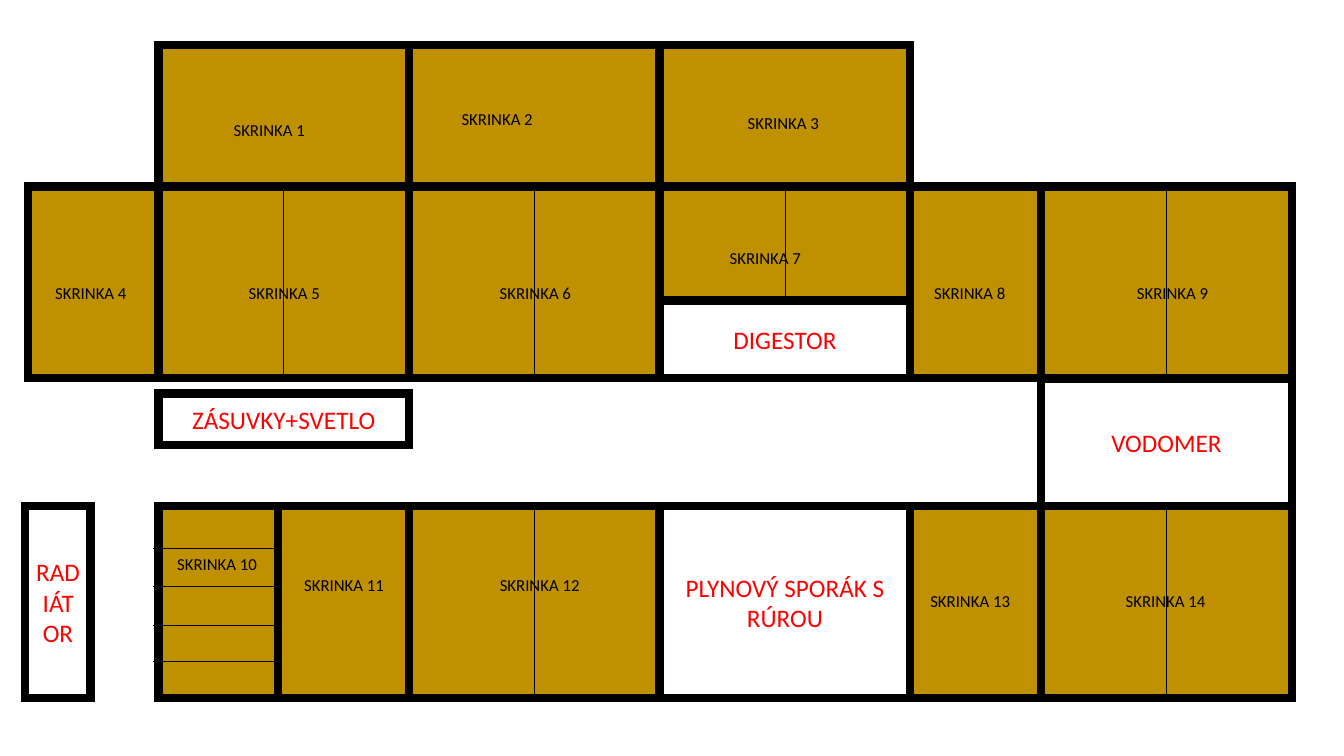
"""Builds the kitchen cabinet layout slide."""
from typing import NamedTuple

from lxml import etree
from pptx import Presentation
from pptx.dml.color import RGBColor
from pptx.enum import shapes, text
from pptx.oxml import ns
from pptx.util import Pt

OAK = RGBColor(0xBF, 0x90, 0x00)
WHITE = RGBColor(0xFF, 0xFF, 0xFF)
BLACK = RGBColor(0x00, 0x00, 0x00)
RED = RGBColor(0xFF, 0x00, 0x00)

FONT = "Calibri"
WIDE, NARROW = 179, 93.5
COL_B = 113.2
COL_A = COL_B - NARROW + 0.5
COL_C = COL_B + WIDE
COL_D = COL_C + WIDE
COL_E = COL_D + WIDE
COL_F = COL_E + NARROW
COL_B2 = 198.8
TOP_ROW, MID_ROW, BASE_ROW = 32, 133.2, 361.6
TOP_HEIGHT, HEIGHT, HOOD_HEIGHT = 101, 137, 55.4
HOOD_TOP = MID_ROW + HEIGHT - HOOD_HEIGHT
LABEL_HEIGHT = 21.8
DRAWER_TOPS = (391.6, 418.6, 446.4, 472.2)


class Cabinet(NamedTuple):
    left: float
    top: float
    width: float
    height: float
    label_left: float
    label_top: float
    label_width: float
    double_door: bool = False


class Fixture(NamedTuple):
    name: str
    left: float
    top: float
    width: float
    height: float


CABINETS = (
    Cabinet(COL_B, TOP_ROW, WIDE, TOP_HEIGHT, 159.8, 82.2, 92),
    Cabinet(COL_C, TOP_ROW, WIDE, TOP_HEIGHT, 322.6, 74.2, 116),
    Cabinet(COL_D, TOP_ROW, WIDE, TOP_HEIGHT, 527, 77, 89),
    Cabinet(COL_A, MID_ROW, NARROW, HEIGHT, 32.4, 198.7, 69),
    Cabinet(COL_B, MID_ROW, WIDE, HEIGHT, 170.6, 198.7, 81, True),
    Cabinet(COL_C, MID_ROW, WIDE, HEIGHT, 349.9, 198.7, 100, True),
    Cabinet(COL_D, MID_ROW, WIDE, HOOD_TOP - MID_ROW, 514.1, 173.5, 94, True),
    Cabinet(COL_E, MID_ROW, NARROW, HEIGHT, 660.2, 198.7, 71),
    Cabinet(COL_F, MID_ROW, WIDE, HEIGHT, 805, 198.7, 86, True),
    Cabinet(COL_B, BASE_ROW, NARROW, HEIGHT, 119.5, 391.7, 72),
    Cabinet(COL_B2, BASE_ROW, NARROW, HEIGHT, 210.2, 407, 78),
    Cabinet(COL_C, BASE_ROW, WIDE, HEIGHT, 349.9, 407, 104, True),
    Cabinet(COL_E, BASE_ROW, NARROW, HEIGHT, 657.4, 418.3, 82),
    Cabinet(COL_F, BASE_ROW, WIDE, HEIGHT, 797, 418.3, 115, True),
)

FIXTURES = (
    Fixture("DIGESTOR", COL_D, HOOD_TOP, WIDE, HOOD_HEIGHT),
    Fixture("PLYNOVÝ SPORÁK S RÚROU", COL_D, BASE_ROW, WIDE, HEIGHT),
    Fixture("RADIÁTOR", 18, BASE_ROW, 46.8, HEIGHT),
    Fixture("ZÁSUVKY+SVETLO", COL_B, 281, WIDE, 36.7),
    Fixture("VODOMER", COL_F, 270.6, WIDE, 91),
)


def write(sp, words: str, *, size: float, color: RGBColor, align, anchor) -> None:
    tf = sp.text_frame
    tf.word_wrap = True
    tf.vertical_anchor = anchor
    p = tf.paragraphs[0]
    p.alignment = align
    r = p.add_run()
    r.text = words
    r.font.name = FONT
    r.font.size = Pt(size)
    r.font.color.rgb = color


def add_box(s, box: Cabinet | Fixture, fill: RGBColor):
    sp = s.shapes.add_shape(shapes.MSO_SHAPE.RECTANGLE, Pt(box.left), Pt(box.top),
                            Pt(box.width), Pt(box.height))
    sp.shadow.inherit = False
    sp.fill.solid()
    sp.fill.fore_color.rgb = fill
    sp.line.color.rgb = BLACK
    sp.line.width = Pt(6)
    etree.SubElement(sp.line._get_or_add_ln(), ns.qn("a:miter"), lim="800000")
    return sp


def add_line(s, x1: float, y1: float, x2: float, y2: float):
    line = s.shapes.add_connector(shapes.MSO_CONNECTOR.STRAIGHT,
                                  Pt(x1), Pt(y1), Pt(x2), Pt(y2))
    line.line.color.rgb = BLACK
    line.line.width = Pt(0.5)
    etree.SubElement(line._element.spPr, ns.qn("a:effectLst"))
    return line


def add_cabinet(s, cabinet: Cabinet) -> None:
    sp = add_box(s, cabinet, OAK)
    if cabinet.double_door:
        middle = cabinet.left + cabinet.width / 2
        door = add_line(s, middle, cabinet.top + cabinet.height, middle, cabinet.top)
        door.begin_connect(sp, 2)
        door.end_connect(sp, 0)


def add_label(s, number: int, cabinet: Cabinet) -> None:
    label = s.shapes.add_textbox(Pt(cabinet.label_left), Pt(cabinet.label_top),
                                 Pt(cabinet.label_width), Pt(LABEL_HEIGHT))
    write(label, f"SKRINKA {number}", size=12, color=BLACK,
          align=text.PP_ALIGN.LEFT, anchor=text.MSO_ANCHOR.TOP)
    label.text_frame.auto_size = text.MSO_AUTO_SIZE.SHAPE_TO_FIT_TEXT


def main() -> None:
    prs = Presentation()
    prs.slide_width, prs.slide_height = Pt(960), Pt(540)
    s = prs.slides.add_slide(prs.slide_layouts[6])
    for cabinet in CABINETS:
        add_cabinet(s, cabinet)
    for top in DRAWER_TOPS:
        add_line(s, COL_B2, top, 109.6, top)
    for fixture in FIXTURES:
        write(add_box(s, fixture, WHITE), fixture.name, size=18, color=RED,
              align=text.PP_ALIGN.CENTER, anchor=text.MSO_ANCHOR.MIDDLE)
    for number, cabinet in enumerate(CABINETS, start=1):
        add_label(s, number, cabinet)
    prs.save("out.pptx")


if __name__ == "__main__":
    main()
